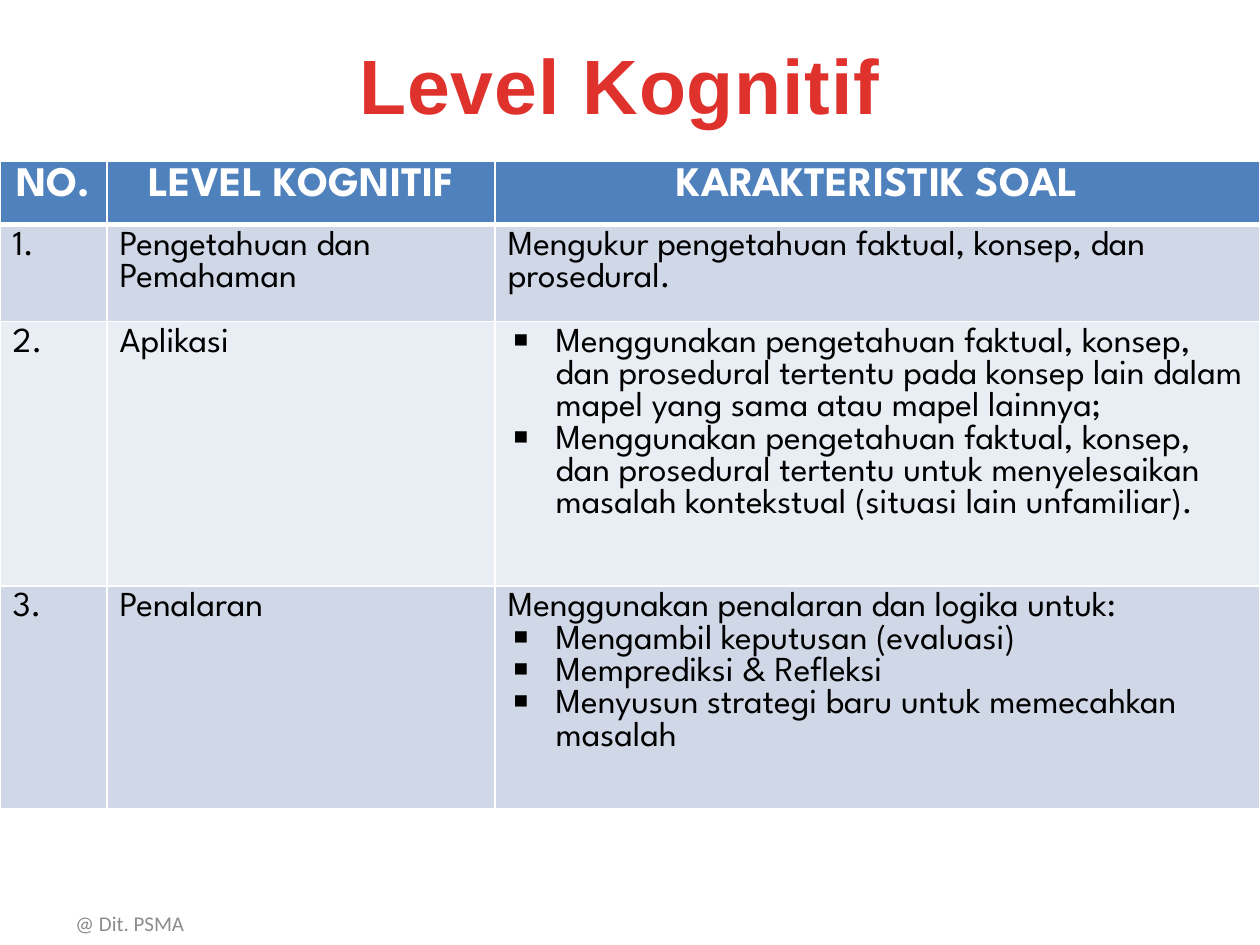
from lxml import etree
from pptx import Presentation
from pptx.dml.color import RGBColor
from pptx.enum import text
from pptx.oxml import ns
from pptx.util import Inches, Pt

BULLET = "▪"
HEADINGS = ["NO.", "LEVEL KOGNITIF", "KARAKTERISTIK SOAL"]
# Paragraphs starting with BULLET become bulleted items.
LEVELS = [
    ["1.", "Pengetahuan dan\nPemahaman",
     "Mengukur pengetahuan faktual, konsep, dan prosedural."],
    ["2.", "Aplikasi",
     "▪Menggunakan pengetahuan faktual, konsep, dan prosedural tertentu "
     "pada konsep lain dalam mapel yang sama atau mapel lainnya;\n"
     "▪Menggunakan pengetahuan faktual, konsep, dan prosedural tertentu "
     "untuk menyelesaikan masalah kontekstual (situasi lain unfamiliar)."],
    ["3.", "Penalaran",
     "Menggunakan penalaran dan logika untuk:\n"
     "▪Mengambil keputusan (evaluasi)\n"
     "▪Memprediksi & Refleksi\n"
     "▪Menyusun strategi baru untuk memecahkan masalah"],
]
COLUMN_WIDTHS = [0.85, 3.08, 6.07]
ROW_HEIGHTS = [0.49, 0.77, 2.1, 1.77]


def color(hex_string):
    return RGBColor.from_string(hex_string)


def add_xml(parent, tag, **attributes):
    return etree.SubElement(parent, ns.qn(tag), **attributes)


class LevelSlide:
    RED, GREY, WHITE, BLACK = "E0322D", "8C8C8C", "FFFFFF", "000000"
    HEADER, BANDS = "4F81BD", ["E9EDF4", "D0D8E8"]
    TABLE_FONT = "League Spartan"

    def __init__(self, deck):
        self.slide = deck.slides.add_slide(deck.slide_layouts[5])

    def format_runs(self, paragraph, font_name, size, hex_string, bold=False):
        for run in paragraph.runs:
            run.font.name = font_name
            run.font.size = Pt(size)
            run.font.bold = bold
            run.font.color.rgb = color(hex_string)

    def title(self, wording, left, top, width, height):
        heading = self.slide.shapes.title
        heading.left, heading.top = Inches(left), Inches(top)
        heading.width, heading.height = Inches(width), Inches(height)
        frame = heading.text_frame
        frame.text = wording
        frame.auto_size = text.MSO_AUTO_SIZE.NONE
        frame.vertical_anchor = text.MSO_ANCHOR.TOP
        paragraph = frame.paragraphs[0]
        paragraph.alignment = text.PP_ALIGN.CENTER
        paragraph.space_before = Pt(6)
        self.format_runs(paragraph, "Arial", 44, self.RED, bold=True)
        paragraph.runs[0].font._element.set("spc", "50")

    def footer(self, wording, left, top, width, height):
        frame = self.slide.shapes.add_textbox(
            Inches(left), Inches(top), Inches(width), Inches(height)).text_frame
        frame.word_wrap = True
        frame.vertical_anchor = text.MSO_ANCHOR.MIDDLE
        frame.text = wording
        self.format_runs(frame.paragraphs[0], "Calibri", 12, self.GREY)

    def bullet(self, paragraph):
        paragraph.text = paragraph.text.removeprefix(BULLET)
        properties = paragraph._p.get_or_add_pPr()
        indent = Inches(0.38)
        properties.set("marL", str(indent))
        properties.set("indent", str(-indent))
        add_xml(properties, "a:buChar", char=BULLET)

    def borders(self, cell, top=1, bottom=1):
        properties = cell._tc.get_or_add_tcPr()
        widths = {"a:lnL": 1, "a:lnR": 1, "a:lnT": top, "a:lnB": bottom}
        for position, (side, points) in enumerate(widths.items()):
            line = add_xml(properties, side, w=str(Pt(points)))
            add_xml(add_xml(line, "a:solidFill"), "a:srgbClr", val=self.WHITE)
            properties.insert(position, line)

    def cell(self, cell, wording, row):
        is_header = row == 0
        cell.fill.solid()
        cell.fill.fore_color.rgb = color(self.HEADER if is_header else self.BANDS[row % 2])
        self.borders(cell, top=3 if row == 1 else 1, bottom=3 if is_header else 1)
        cell.text_frame.text = wording
        for paragraph in cell.text_frame.paragraphs:
            if paragraph.text.startswith(BULLET):
                self.bullet(paragraph)
            if is_header:
                paragraph.alignment = text.PP_ALIGN.CENTER
                self.format_runs(paragraph, self.TABLE_FONT, 24, self.WHITE, bold=True)
            else:
                self.format_runs(paragraph, self.TABLE_FONT, 20, self.BLACK)

    def table(self, rows, left, top):
        grid = self.slide.shapes.add_table(
            len(rows), len(COLUMN_WIDTHS), Inches(left), Inches(top),
            Inches(sum(COLUMN_WIDTHS)), Inches(sum(ROW_HEIGHTS))).table
        for column, width in zip(grid.columns, COLUMN_WIDTHS):
            column.width = Inches(width)
        for row, height in zip(grid.rows, ROW_HEIGHTS):
            row.height = Inches(height)
        for r, wordings in enumerate(rows):
            for c, wording in enumerate(wordings):
                self.cell(grid.cell(r, c), wording, r)


def main():
    deck = Presentation()
    deck.slide_width, deck.slide_height = Inches(10), Inches(7.5)
    page = LevelSlide(deck)
    page.title("Level Kognitif", 2.17, 0.25, 5.5, 0.84)
    page.footer("@ Dit. PSMA", 0.5, 7.13, 1.51, 0.4)
    page.table([HEADINGS] + LEVELS, 0, 1.28)
    deck.save("out.pptx")


if __name__ == "__main__":
    main()
